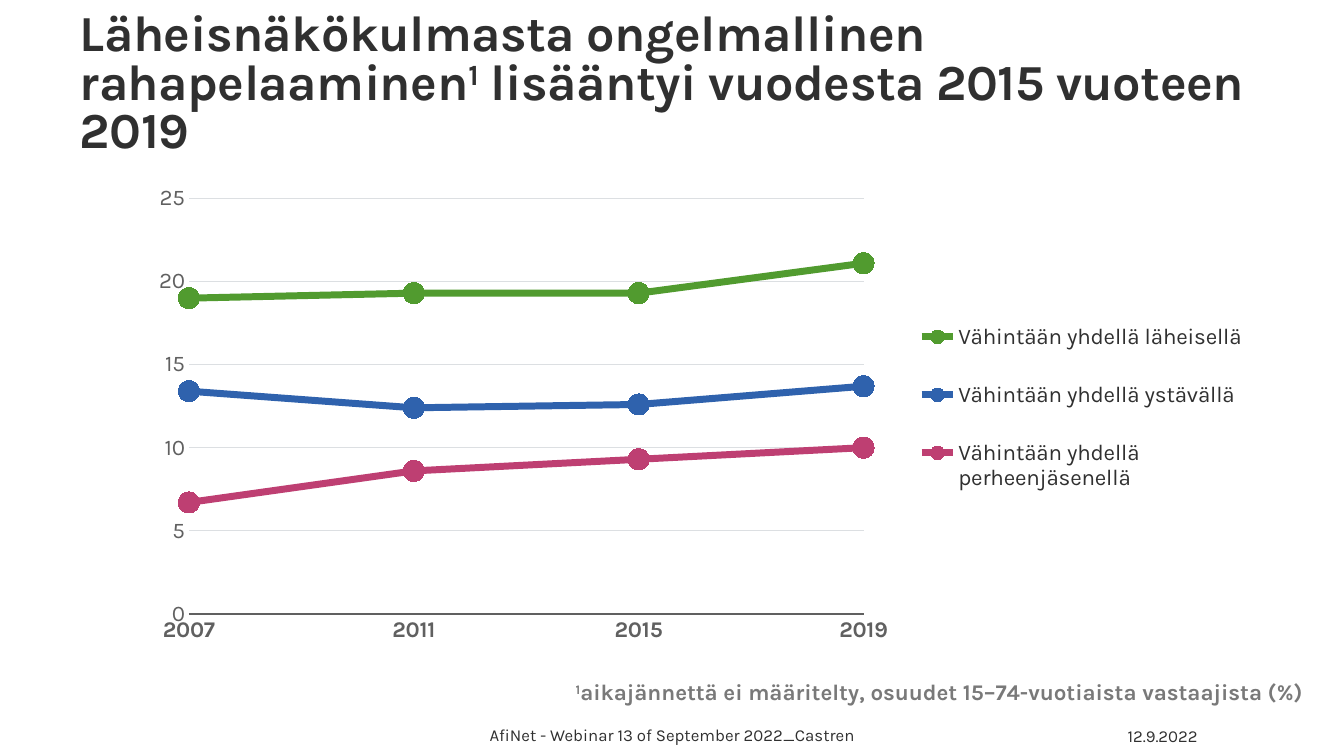
from pptx import Presentation
from pptx.chart.data import CategoryChartData
from pptx.dml.color import RGBColor
from pptx.enum import chart as ch, text as tx
from pptx.oxml import parse_xml
from pptx.oxml.ns import nsdecls, qn
from pptx.util import Pt

FONT = "Karla"
COLORS = {
    "ink": "303030", "axis": "606060", "note": "797979", "grid": "DCDFE2", "white": "FFFFFF",
    "close": "519B2F", "friend": "2F62AD", "family": "BE3F72",
}
YEARS = ["2007", "2011", "2015", "2019"]
SHARES = [
    ("Vähintään yhdellä läheisellä", "close", (19, 19.3, 19.3, 21.1)),
    ("Vähintään yhdellä ystävällä", "friend", (13.4, 12.4, 12.6, 13.7)),
    ("Vähintään yhdellä perheenjäsenellä", "family", (6.7, 8.6, 9.3, 10)),
]


def rgb(name):
    return RGBColor.from_string(COLORS[name])


def set_font(font, size, color, bold=False):
    font.name, font.size, font.bold = FONT, Pt(size), bold
    font.color.rgb = rgb(color)


def add_runs(paragraph, parts, spacing=0):
    for words, raised in parts:
        run = paragraph.add_run()
        run.text = words
        properties = run._r.get_or_add_rPr()
        if spacing:
            properties.set("spc", str(spacing))
        if raised:
            properties.set("baseline", "30000")


def place_title(slide, left, top, width, height):
    title = slide.shapes.title
    title.left, title.top, title.width, title.height = map(Pt, (left, top, width, height))
    frame = title.text_frame
    frame.word_wrap = True
    frame.auto_size = tx.MSO_AUTO_SIZE.NONE
    frame.vertical_anchor = tx.MSO_ANCHOR.MIDDLE
    frame.margin_left, frame.margin_right = Pt(0), Pt(6)
    frame.margin_top = frame.margin_bottom = Pt(3)
    heading = frame.paragraphs[0]
    heading.alignment = tx.PP_ALIGN.LEFT
    heading.line_spacing = 0.8
    heading.space_before = Pt(0)
    add_runs(heading, [("Läheisnäkökulmasta ongelmallinen rahapelaaminen", False), ("1", True),
                       (" lisääntyi vuodesta 2015 vuoteen 2019", False)], -40)
    set_font(heading.font, 36, "ink", True)


def add_line(slide, parts, left, top, width, height, size, color, align, bold=False,
             anchor=tx.MSO_ANCHOR.MIDDLE):
    frame = slide.shapes.add_textbox(Pt(left), Pt(top), Pt(width), Pt(height)).text_frame
    frame.word_wrap = True
    frame.vertical_anchor = anchor
    line = frame.paragraphs[0]
    line.alignment = align
    add_runs(line, parts)
    set_font(line.font, size, color, bold)


def set_layout(parent, index, x, y, w, h, inner=False):
    for old in parent.findall(qn("c:layout")):
        parent.remove(old)
    target = '<c:layoutTarget val="inner"/>' if inner else ""
    sizes = "".join(f'<c:{key} val="{value}"/>' for key, value in zip("xywh", (x, y, w, h)))
    parent.insert(index, parse_xml(
        f'<c:layout {nsdecls("c")}><c:manualLayout>{target}'
        f'<c:xMode val="edge"/><c:yMode val="edge"/>{sizes}</c:manualLayout></c:layout>'))


def add_share_chart(slide, left, top, width, height):
    data = CategoryChartData()
    data.categories = YEARS
    for name, _, values in SHARES:
        data.add_series(name, values)
    chart = slide.shapes.add_chart(ch.XL_CHART_TYPE.LINE_MARKERS, Pt(left), Pt(top),
                                   Pt(width), Pt(height), data).chart
    set_font(chart.font, 10, "ink")
    chart.has_title = False
    chart.plots[0].vary_by_categories = False

    for series, (_, color, _) in zip(chart.series, SHARES):
        series.smooth = False
        series.format.line.color.rgb = rgb(color)
        series.format.line.width = Pt(5)
        series.marker.style = ch.XL_MARKER_STYLE.CIRCLE
        series.marker.size = 15
        series.marker.format.fill.solid()
        series.marker.format.fill.fore_color.rgb = rgb(color)
        series.marker.format.line.color.rgb = rgb("white")

    years, shares = chart.category_axis, chart.value_axis
    for axis in (years, shares):
        axis.major_tick_mark = axis.minor_tick_mark = ch.XL_TICK_MARK.NONE
        set_font(axis.tick_labels.font, 16, "axis", axis is years)
    years.format.line.color.rgb = rgb("axis")
    years.format.line.width = Pt(1.5)
    shares.minimum_scale, shares.maximum_scale, shares.major_unit = 0, 25, 5
    shares.tick_labels.number_format = "0"
    shares.tick_labels.number_format_is_linked = False
    shares.format.line.fill.background()
    shares.major_gridlines.format.line.color.rgb = rgb("grid")
    shares.major_gridlines.format.line.width = Pt(1)
    shares._element.find(qn("c:crosses")).addnext(
        parse_xml(f'<c:crossBetween {nsdecls("c")} val="midCat"/>'))

    chart.has_legend = True
    legend = chart.legend
    legend.position = ch.XL_LEGEND_POSITION.BOTTOM
    legend.include_in_layout = False
    set_font(legend.font, 16, "ink")
    set_layout(legend._element, 1, 0.7, 0.25, 0.29, 0.45)
    set_layout(chart._chartSpace.chart.plotArea, 0, 0.092, 0.07, 0.569, 0.805, True)


def build_trend_slide(deck):
    slide = deck.slides.add_slide(deck.slide_layouts[5])
    place_title(slide, 57, 14.4, 847, 93.6)
    add_line(slide, [("1", True),
                     ("aikajännettä ei määritelty, osuudet 15–74-vuotiaista vastaajista (%) ", False)],
             160.5, 481, 781.5, 26.6, 16, "note", tx.PP_ALIGN.RIGHT, True, tx.MSO_ANCHOR.TOP)
    add_share_chart(slide, 57, 116, 847, 368.6)
    add_line(slide, [("AfiNet - Webinar 13 of September 2022_Castren", False)],
             206.6, 510.5, 547.2, 28.8, 12, "ink", tx.PP_ALIGN.CENTER)
    add_line(slide, [("12.9.2022", False)], 777.6, 510.5, 85, 30.2, 12, "ink", tx.PP_ALIGN.RIGHT)


def main():
    deck = Presentation()
    deck.slide_width, deck.slide_height = Pt(960), Pt(540)
    build_trend_slide(deck)
    deck.save("out.pptx")


if __name__ == "__main__":
    main()
